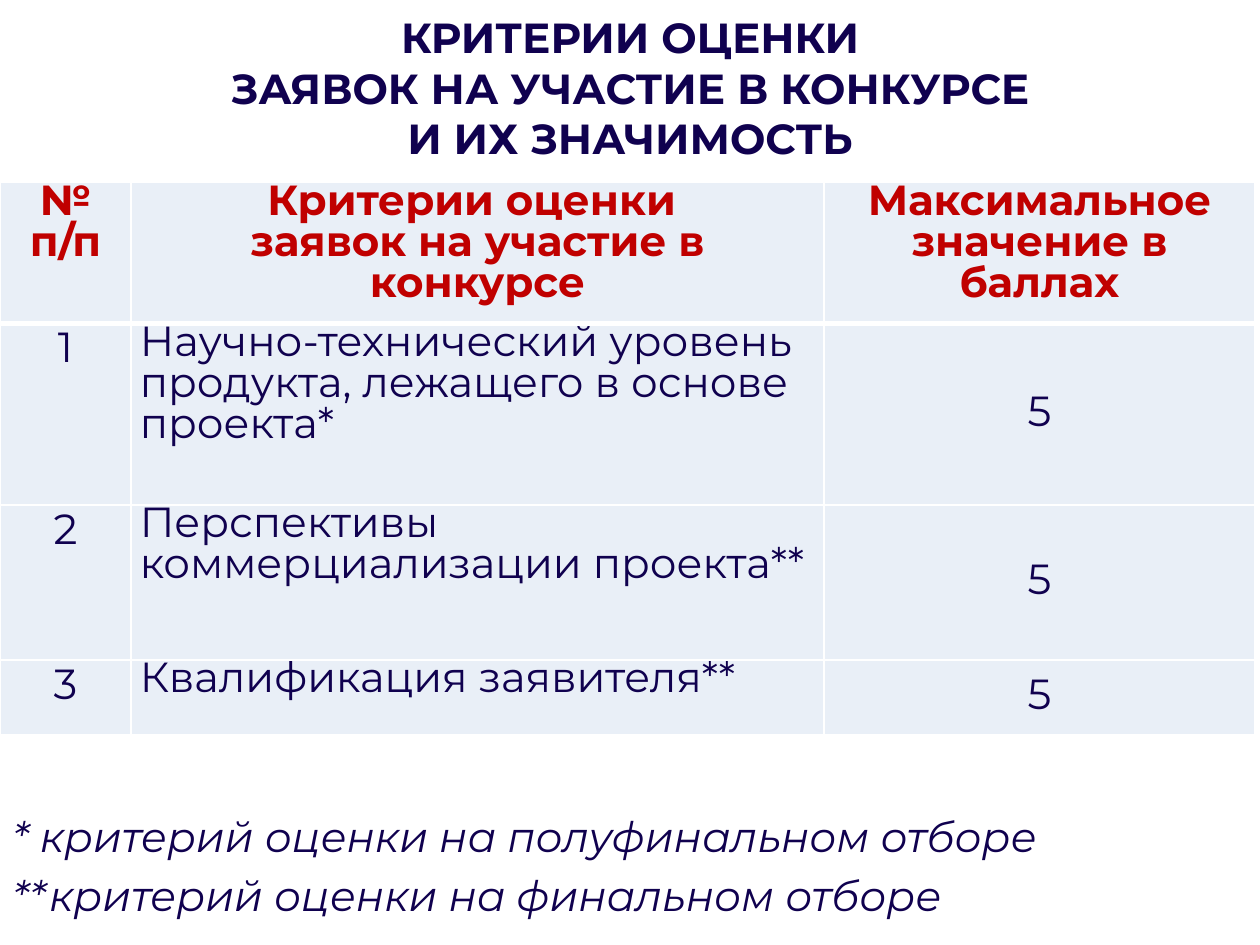
from dataclasses import dataclass

from lxml.etree import SubElement
from pptx import Presentation
from pptx.dml.color import RGBColor
from pptx.enum.text import MSO_ANCHOR as Anchor, MSO_AUTO_SIZE as AutoSize, PP_ALIGN as Align
from pptx.oxml.ns import qn
from pptx.util import Inches, Pt

COLORS = {"navy": "10014F", "red": "C00000", "cell": "E9EFF7", "white": "FFFFFF"}
FONT = "Montserrat"
TEXT_SIZE = 24
COLUMN_WIDTHS = (1.04, 5.5, 3.42)
ROW_HEIGHTS = (1.12, 1.44, 1.23, 0.59, 0.5, 1.42)
HEADER_RULE = 3
THIN_RULE = 1


@dataclass(frozen=True)
class TextStyle:
    color: str = "navy"
    bold: bool = False
    italic: bool = False
    align: Align = Align.LEFT
    spacing: float = 0.8


@dataclass(frozen=True)
class Criterion:
    number: str
    name: str
    max_score: str


TITLE = TextStyle(bold=True, align=Align.CENTER, spacing=1.0)
HEADER = TextStyle(color="red", bold=True, align=Align.CENTER)
CENTERED = TextStyle(align=Align.CENTER)
NAME = TextStyle()
FOOTNOTE = TextStyle(italic=True, spacing=1.15)

TITLE_LINES = "КРИТЕРИИ ОЦЕНКИ\nЗАЯВОК НА УЧАСТИЕ В КОНКУРСЕ\nИ ИХ ЗНАЧИМОСТЬ"
HEADINGS = (
    ["№", "п/п"],
    ["Критерии оценки \nзаявок на участие в конкурсе"],
    ["Максимальное значение в баллах"],
)
CRITERIA = (
    Criterion("1", "Научно-технический уровень продукта, лежащего в основе проекта*", "5"),
    Criterion("2", "Перспективы коммерциализации проекта**", "5"),
    Criterion("3", "Квалификация заявителя**", "5"),
)
FOOTNOTES = [
    "* критерий оценки на полуфинальном отборе",
    "**критерий оценки на финальном отборе",
]


def write_text(frame, paragraphs: list[str], style: TextStyle) -> None:
    for index, content in enumerate(paragraphs):
        paragraph = frame.paragraphs[0] if index == 0 else frame.add_paragraph()
        paragraph.alignment = style.align
        paragraph.line_spacing = style.spacing
        for line_index, line in enumerate(content.split("\n")):
            if line_index:
                paragraph.add_line_break()
            run = paragraph.add_run()
            run.text = line
            run.font.name = FONT
            run.font.size = Pt(TEXT_SIZE)
            run.font.bold = style.bold
            run.font.italic = style.italic
            run.font.color.rgb = RGBColor.from_string(COLORS[style.color])


def set_borders(cell, top: int, bottom: int) -> None:
    properties = cell._tc.get_or_add_tcPr()
    widths = {"a:lnL": THIN_RULE, "a:lnR": THIN_RULE, "a:lnT": top, "a:lnB": bottom}
    for side, width in widths.items():
        line = SubElement(properties, qn(side), w=str(Pt(width)))
        fill = SubElement(line, qn("a:solidFill"))
        SubElement(fill, qn("a:srgbClr"), val=COLORS["white"])


def fill_cell(cell, paragraphs: list[str], style: TextStyle,
              anchor: Anchor = Anchor.TOP, tight: bool = True) -> None:
    cell.fill.solid()
    cell.fill.fore_color.rgb = RGBColor.from_string(COLORS["cell"])
    cell.vertical_anchor = anchor
    if tight:
        cell.margin_left = cell.margin_right = Inches(0.07)
        cell.margin_top = cell.margin_bottom = 0
    write_text(cell.text_frame, paragraphs, style)


def add_title(slide) -> None:
    title = slide.shapes.title
    title.left, title.top = Inches(0.12), Inches(0.04)
    title.width, title.height = Inches(9.76), Inches(1.31)
    title.text_frame.auto_size = AutoSize.NONE
    title.text_frame.vertical_anchor = Anchor.MIDDLE
    write_text(title.text_frame, [TITLE_LINES], TITLE)


def add_criteria_table(slide) -> None:
    table = slide.shapes.add_table(
        len(ROW_HEIGHTS), len(COLUMN_WIDTHS), 0, Inches(1.45),
        Inches(sum(COLUMN_WIDTHS)), Inches(sum(ROW_HEIGHTS))).table
    table.horz_banding = False
    for column, width in zip(table.columns, COLUMN_WIDTHS):
        column.width = Inches(width)
    for index, (row, height) in enumerate(zip(table.rows, ROW_HEIGHTS)):
        row.height = Inches(height)
        for cell in row.cells:
            set_borders(cell, top=HEADER_RULE if index == 1 else THIN_RULE,
                        bottom=HEADER_RULE if index == 0 else THIN_RULE)
            cell.fill.background()

    for column, heading in enumerate(HEADINGS):
        fill_cell(table.cell(0, column), heading, HEADER)
    for row, criterion in enumerate(CRITERIA, start=1):
        fill_cell(table.cell(row, 0), [criterion.number], CENTERED, tight=False)
        fill_cell(table.cell(row, 1), [criterion.name], NAME)
        fill_cell(table.cell(row, 2), [criterion.max_score], CENTERED, Anchor.MIDDLE)

    last_row = len(ROW_HEIGHTS) - 1
    footnote = table.cell(last_row, 0)
    footnote.merge(table.cell(last_row, len(COLUMN_WIDTHS) - 1))
    write_text(footnote.text_frame, FOOTNOTES, FOOTNOTE)


def main() -> None:
    presentation = Presentation()
    presentation.slide_width, presentation.slide_height = Inches(10), Inches(7.5)
    slide = presentation.slides.add_slide(presentation.slide_layouts[5])
    add_title(slide)
    add_criteria_table(slide)
    presentation.save("out.pptx")


if __name__ == "__main__":
    main()
